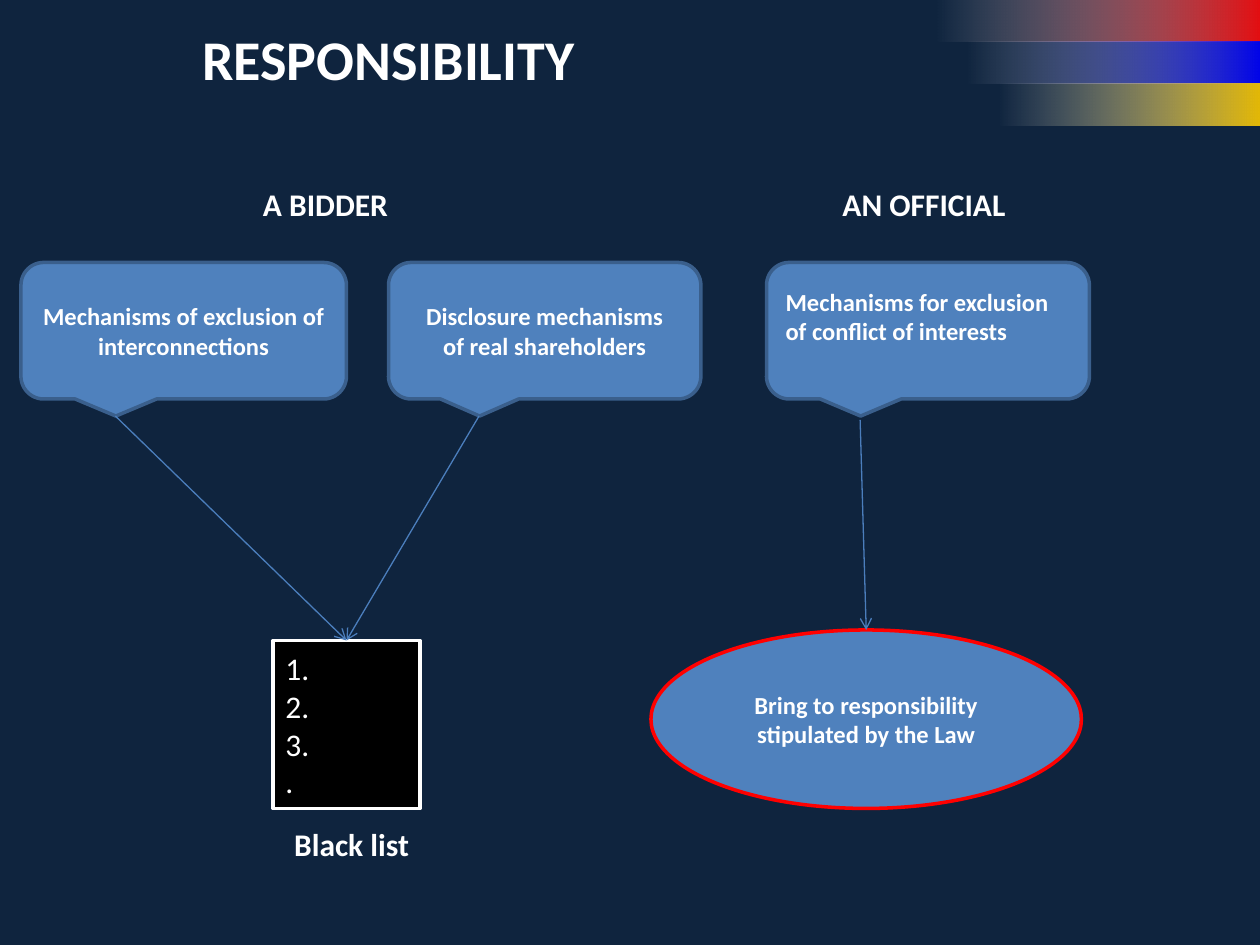
"""Build the slide on the responsibility of bidders and officials."""
from lxml import etree
from pptx import Presentation
from pptx.dml.color import RGBColor
from pptx.enum.shapes import MSO_CONNECTOR, MSO_SHAPE
from pptx.enum.text import MSO_ANCHOR, PP_ALIGN
from pptx.oxml.ns import qn
from pptx.util import Pt

RECTANGLE = MSO_SHAPE.RECTANGLE
ELLIPSE = MSO_SHAPE.OVAL
CALLOUT = MSO_SHAPE.ROUNDED_RECTANGULAR_CALLOUT
STRAIGHT = MSO_CONNECTOR.STRAIGHT
LEFT, CENTER = PP_ALIGN.LEFT, PP_ALIGN.CENTER
TOP, MIDDLE = MSO_ANCHOR.TOP, MSO_ANCHOR.MIDDLE

FONT = "Calibri"
SLIDE_WIDTH, SLIDE_HEIGHT = 720, 540
BAR_HEIGHT = 24
CALLOUT_TOP, CALLOUT_HEIGHT = 150, 78
TIP_X = 0.29
COLORS = {
    "background": "0F243E",
    "white": "FFFFFF",
    "black": "000000",
    "red": "FF0000",
    "blue": "4F81BD",
    "outline": "3A5F8C",
    "arrow": "4B7EBC",
    "bar_red": "FF0D0D",
    "bar_blue": "0000FF",
    "bar_yellow": "FFCC00",
}


def color(name):
    """Return the named colour."""
    return RGBColor.from_string(COLORS[name])


def write(shape, lines, size, bold=True, align=CENTER, anchor=MIDDLE):
    """Fill a shape with one paragraph per line."""
    frame = shape.text_frame
    frame.word_wrap = True
    frame.vertical_anchor = anchor
    frame.text = "\n".join(lines)
    for para in frame.paragraphs:
        para.alignment = align
        para.font.name = FONT
        para.font.size = Pt(size)
        para.font.bold = bold
        para.font.color.rgb = color("white")


def add_label(page, box, text, size=18, anchor=TOP):
    """Add a bold centred text box."""
    label = page.shapes.add_textbox(*map(Pt, box))
    write(label, [text], size, anchor=anchor)


def add_panel(page, kind, box, fill, line):
    """Add a filled and outlined shape."""
    panel = page.shapes.add_shape(kind, *map(Pt, box))
    panel.shadow.inherit = False
    panel.fill.solid()
    panel.fill.fore_color.rgb = color(fill)
    panel.line.color.rgb = color(line)
    panel.line.width = Pt(2)
    return panel


def add_callout(page, left, width, lines, align=CENTER):
    """Add a mechanism callout with its tip at the bottom."""
    box = (left, CALLOUT_TOP, width, CALLOUT_HEIGHT)
    callout = add_panel(page, CALLOUT, box, "blue", "outline")
    write(callout, lines, 14, align=align)
    return callout


def add_bar(page, left, top, name):
    """Add a corner bar that fades in from the left."""
    box = (left, top, SLIDE_WIDTH - left, BAR_HEIGHT)
    bar = page.shapes.add_shape(RECTANGLE, *map(Pt, box))
    bar.shadow.inherit = False
    bar.line.fill.background()
    bar.fill.gradient()
    bar.fill.gradient_angle = 0
    for stop, stop_color in zip(bar.fill.gradient_stops, ("white", name)):
        stop.color.rgb = color(stop_color)
    stops = bar.element.spPr.iter(qn("a:srgbClr"))
    for node, alpha in zip(list(stops), (0, 89000)):
        etree.SubElement(node, qn("a:alpha"), val=str(alpha))


def add_arrow(page, start, target):
    """Add a thin arrow from a point to the top of a shape."""
    x, y = map(Pt, start)
    arrow = page.shapes.add_connector(STRAIGHT, x, y, x, y)
    arrow.end_connect(target, 0)
    arrow.line.color.rgb = color("arrow")
    arrow.line.width = Pt(0.75)
    etree.SubElement(arrow.line._get_or_add_ln(), qn("a:tailEnd"), type="arrow")
    etree.SubElement(arrow.element.spPr, qn("a:effectLst"))


def main():
    """Build and save the deck."""
    deck = Presentation()
    deck.slide_width, deck.slide_height = Pt(SLIDE_WIDTH), Pt(SLIDE_HEIGHT)
    page = deck.slides.add_slide(deck.slide_layouts[6])
    page.background.fill.solid()
    page.background.fill.fore_color.rgb = color("background")

    for row, name in enumerate(("bar_red", "bar_blue", "bar_yellow")):
        add_bar(page, 534 + 18 * row, BAR_HEIGHT * row, name)
    add_label(page, (0, 18, 444, 30), "RESPONSIBILITY", 32, MIDDLE)

    add_callout(page, 12, 186, ["Mechanisms of exclusion of interconnections"])
    add_callout(page, 222, 178.5, ["Disclosure mechanisms", "of real shareholders"])
    conflict = add_callout(
        page, 438, 184.5, ["Mechanisms for exclusion", "of conflict of interests"], LEFT
    )
    conflict.text_frame.margin_bottom = Pt(20)

    black_list = add_panel(page, RECTANGLE, (156, 366, 84, 96), "black", "white")
    write(black_list, ["1.", "2.", "3.", "."], 18, bold=False, align=LEFT)
    add_label(page, (144, 468, 114, 29), "Black list")
    penalty = add_panel(page, ELLIPSE, (372, 360, 246, 102), "blue", "red")
    write(penalty, ["Bring to responsibility", "stipulated by the Law"], 14)

    for left, text in ((102, "A BIDDER"), (444, "AN OFFICIAL")):
        add_label(page, (left, 102, 168, 29), text)
    for left, width, top, target in (
        (12, 186, 237.75, black_list),
        (222, 178.5, 237.75, black_list),
        (438, 184.5, 240, penalty),
    ):
        add_arrow(page, (left + TIP_X * width, top), target)

    deck.save("out.pptx")


if __name__ == "__main__":
    main()
